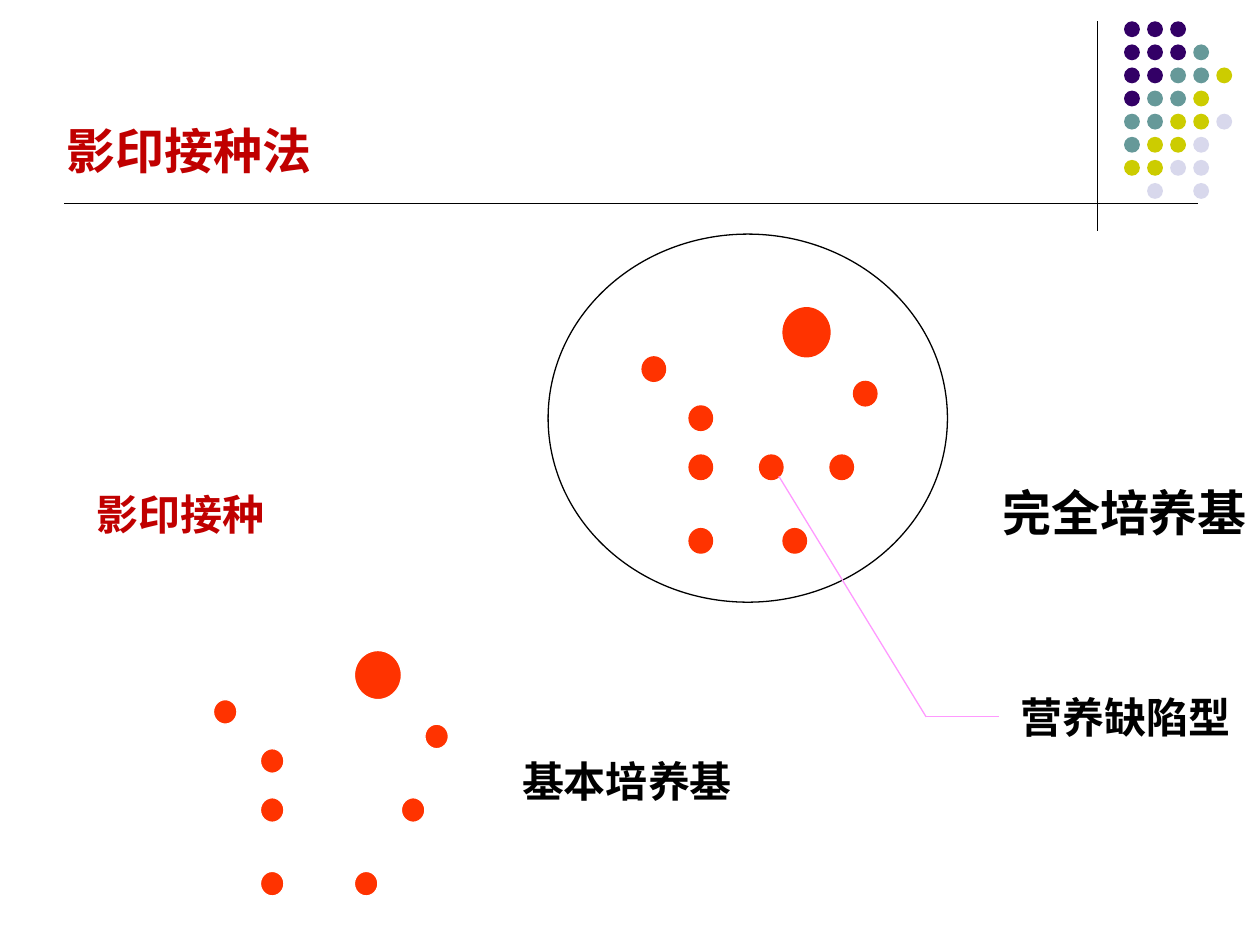
from dataclasses import dataclass

from lxml import etree
from pptx import Presentation
from pptx import util as u
from pptx.dml.color import RGBColor
from pptx.enum import shapes, text
from pptx.oxml import ns


@dataclass(frozen=True)
class Theme:
    """Colours, type sizes and font of the slide."""
    black: str = "000000"
    white: str = "FFFFFF"
    heading: str = "C00000"
    colony: str = "FF3300"
    leader: str = "FF99FF"
    violet: str = "330066"
    teal: str = "669999"
    olive: str = "CCCC00"
    pale: str = "D8D8EC"
    large: int = 28
    medium: int = 24
    font: str = "Noto Sans CJK SC"


THEME = Theme()
DOT_ROWS = ("VVV", "VVVT", "VVTTO", "VTTO", "TTOOP", "TOOP", "OOPP", " P P")
DOT_COLOURS = {"V": THEME.violet, "T": THEME.teal, "O": THEME.olive, "P": THEME.pale}
DISH_COLUMNS, DISH_ROWS = 17, 15
LARGE_COLONY = (10, 3)
PROTOTROPHS = ((4, 5), (6, 7), (6, 9), (12, 9), (6, 12), (13, 6), (10, 12))
AUXOTROPH = (9, 9)


def add_rule(slide, start, end, colour, width=0.75):
    """Draw a straight line between two points in centimetres."""
    rule = slide.shapes.add_connector(
        shapes.MSO_CONNECTOR.STRAIGHT, *map(u.Cm, (*start, *end)))
    rule.line.color.rgb = RGBColor.from_string(colour)
    rule.line.width = u.Pt(width)
    etree.SubElement(rule._element.spPr, ns.qn("a:effectLst"))


def add_oval(slide, box, fill, outline=None):
    """Draw an oval in a box, with an optional outline."""
    oval = slide.shapes.add_shape(shapes.MSO_SHAPE.OVAL, *map(u.Cm, box))
    oval.shadow.inherit = False
    oval.fill.solid()
    oval.fill.fore_color.rgb = RGBColor.from_string(fill)
    if outline:
        oval.line.color.rgb = RGBColor.from_string(outline)
        oval.line.width = u.Pt(0.75)
    else:
        oval.line.fill.background()


def write_text(holder, box, wording, size, colour, align):
    """Place a text holder and write one bold line in it."""
    for name, value in zip(("left", "top", "width", "height"), box):
        setattr(holder, name, u.Cm(value))
    frame = holder.text_frame
    frame_format = {"word_wrap": False, "vertical_anchor": text.MSO_ANCHOR.TOP,
                    "auto_size": text.MSO_AUTO_SIZE.SHAPE_TO_FIT_TEXT}
    for name, value in frame_format.items():
        setattr(frame, name, value)
    paragraph = frame.paragraphs[0]
    paragraph.alignment = align
    run = paragraph.add_run()
    run.text = wording
    for name, value in {"size": u.Pt(size), "bold": True, "name": THEME.font}.items():
        setattr(run.font, name, value)
    run.font.color.rgb = RGBColor.from_string(colour)
    etree.SubElement(run._r.get_or_add_rPr(), ns.qn("a:ea"), typeface=THEME.font)


def add_label(slide, box, wording, size=THEME.medium, colour=THEME.black,
              align=text.PP_ALIGN.CENTER):
    """Add a bold label in a box."""
    label = slide.shapes.add_textbox(*map(u.Cm, box))
    write_text(label, box, wording, size, colour, align)


def add_dot_ornament(slide, box):
    """Draw the corner ornament of coloured dots on an even grid."""
    left, top, width, height = box
    diameter = 0.32
    column_pitch, row_pitch = (width - diameter) / 4, (height - diameter) / 7
    for row, codes in enumerate(DOT_ROWS):
        for column, code in enumerate(codes):
            if code in DOT_COLOURS:
                add_oval(slide, (left + column * column_pitch, top + row * row_pitch,
                                 diameter, diameter), DOT_COLOURS[code])


def add_header(slide, box):
    """Write the title and draw the header rules and ornament."""
    left, top, width, height = box
    bottom = top + height
    write_text(slide.shapes.title, (left - 0.21, top + 1.88, 5.51, 1.45),
               "影印接种法", THEME.large, THEME.heading, text.PP_ALIGN.LEFT)
    add_rule(slide, (left + 20.82, top), (left + 20.82, bottom + 0.54), THEME.black)
    add_rule(slide, (left, bottom), (left + width, bottom), THEME.black, 0.5)
    add_dot_ornament(slide, (left + 21.36, top, 2.18, 3.58))


def add_colonies(slide, box, cells, outline):
    """Place one large colony and the small ones on the grid of a dish."""
    left, top, width, height = box
    column_pitch, row_pitch = width / DISH_COLUMNS, height / DISH_ROWS
    for cell, span in ((LARGE_COLONY, 2), *((cell, 1) for cell in cells)):
        column, row = cell
        add_oval(slide, (left + column * column_pitch, top + row * row_pitch,
                         span * column_pitch, span * row_pitch),
                 THEME.colony, outline)


def add_complete_medium(slide, box):
    """Draw the dish of complete medium with every colony."""
    left, top, _, _ = box
    add_oval(slide, box, THEME.white, THEME.black)
    add_colonies(slide, box, (*PROTOTROPHS, AUXOTROPH), THEME.colony)
    add_label(slide, (left + 8.89, top + 4.88, 5.46, 1.45), "完全培养基", THEME.large)


def add_minimal_medium(slide, box):
    """Draw the replica on minimal medium, which lacks the auxotroph."""
    left, top, _, _ = box
    add_label(slide, (left - 0.71, top - 1.9, 3.96, 1.3), "影印接种",
              colour=THEME.heading, align=text.PP_ALIGN.LEFT)
    add_label(slide, (left + 7.83, top + 3.48, 4.8, 1.3), "基本培养基")
    add_colonies(slide, box, PROTOTROPHS, THEME.white)


def add_auxotroph_callout(slide, box):
    """Lead from the auxotroph colony to its label."""
    left, top, width, height = box
    elbow = (left + 2.97, top + height)
    add_rule(slide, (left, top), elbow, THEME.leader)
    add_rule(slide, elbow, (left + width, top + height), THEME.leader)
    add_label(slide, (left + width + 0.15, top + height - 0.63, 4.8, 1.3), "营养缺陷型")


def main():
    """Build and save the slide."""
    deck = Presentation()
    deck.slide_width, deck.slide_height = u.Cm(25.4), u.Cm(19.05)
    slide = deck.slides.add_slide(deck.slide_layouts.get_by_name("Title Only"))
    add_header(slide, (1.3, 0.43, 22.86, 3.68))
    add_complete_medium(slide, (11.05, 4.72, 8.05, 7.42))
    add_minimal_medium(slide, (2.41, 11.63, 8.05, 7.42))
    add_auxotroph_callout(slide, (15.7, 9.6, 4.44, 4.85))
    deck.save("out.pptx")


if __name__ == "__main__":
    main()
